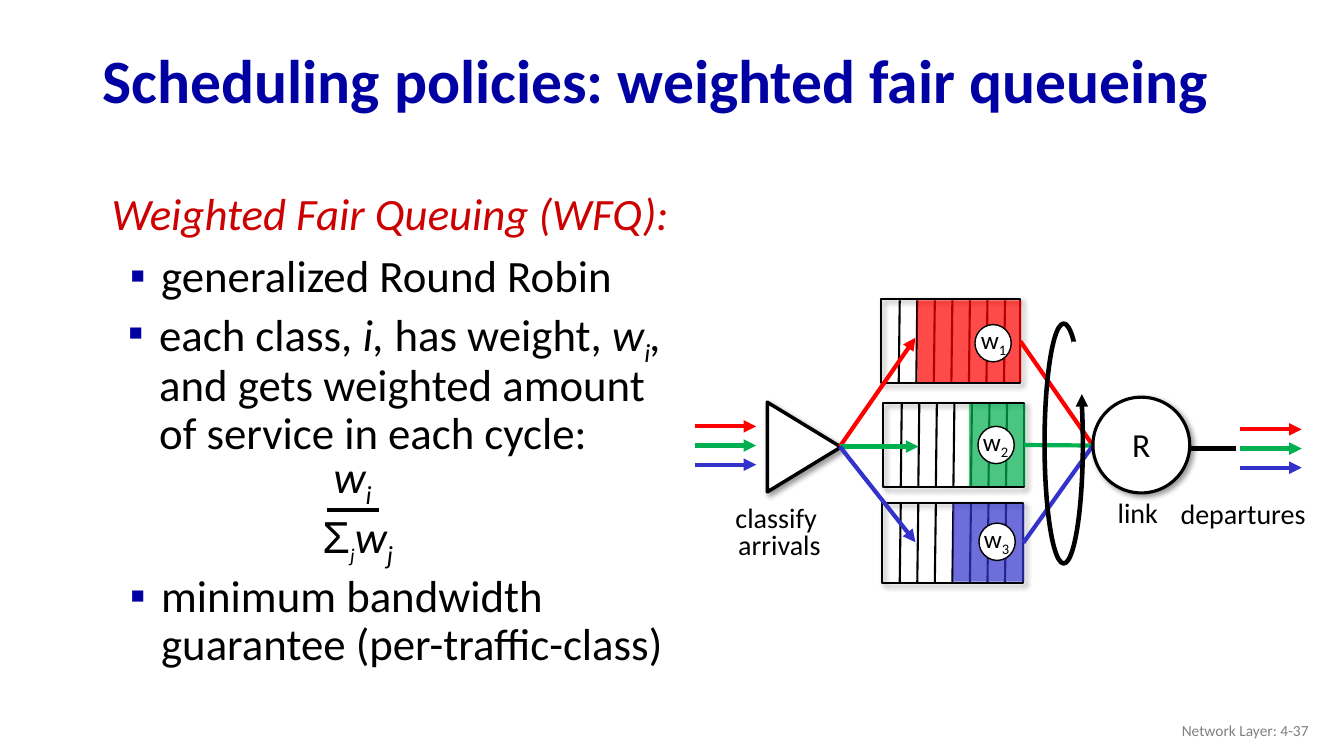
from lxml import etree
from pptx import Presentation
from pptx.dml.color import RGBColor
from pptx.enum.shapes import MSO_CONNECTOR, MSO_SHAPE
from pptx.enum.text import MSO_ANCHOR, MSO_AUTO_SIZE, PP_ALIGN
from pptx.oxml.ns import qn
from pptx.util import Inches, Pt

RECT, OVAL = MSO_SHAPE.RECTANGLE, MSO_SHAPE.OVAL
WEDGE = MSO_SHAPE.ISOSCELES_TRIANGLE
STRAIGHT = MSO_CONNECTOR.STRAIGHT
LEFT, MID, RIGHT = PP_ALIGN.LEFT, PP_ALIGN.CENTER, PP_ALIGN.RIGHT
CENTRE, FIT = MSO_ANCHOR.MIDDLE, MSO_AUTO_SIZE.SHAPE_TO_FIT_TEXT
BLACK, WHITE = RGBColor(0, 0, 0), RGBColor(255, 255, 255)
NAVY, CRIMSON = RGBColor(0x00, 0x00, 0xA3), RGBColor(0xCC, 0x00, 0x00)
GREY = RGBColor(0x80, 0x80, 0x80)
RED, GREEN = RGBColor(0xFF, 0x00, 0x00), RGBColor(0x00, 0xB0, 0x50)
BLUE = RGBColor(0x33, 0x33, 0xCC)
FLOWS = [RED, GREEN, BLUE]

deck = Presentation()
deck.slide_width, deck.slide_height = Inches(13.33), Inches(7.5)
slide = deck.slides.add_slide(deck.slide_layouts[5])


def draw(kind, box, fill=None, width=0, shade=False):
    """Add a shape; no fill colour leaves it hollow, zero width drops its outline."""
    shape = slide.shapes.add_shape(kind, *map(Inches, box))
    shape.shadow.inherit = False
    if fill is None:
        shape.fill.background()
    else:
        shape.fill.solid()
        shape.fill.fore_color.rgb = fill
    if width:
        shape.line.color.rgb = BLACK
        shape.line.width = Pt(width)
    else:
        shape.line.fill.background()
    if shade:
        effects = shape.element.spPr.find(qn("a:effectLst"))
        outer = etree.SubElement(effects, qn("a:outerShdw"), blurRad=str(Pt(4)),
                                 dist=str(Pt(3)), dir="2700000", rotWithShape="0")
        color = etree.SubElement(outer, qn("a:srgbClr"), val="000000")
        etree.SubElement(color, qn("a:alpha"), val="40000")
    return shape


def link(start, end, color=BLACK, width=3, arrow=False):
    """Add a straight line between two points, with an arrowhead at its end if asked."""
    line = slide.shapes.add_connector(STRAIGHT, *map(Inches, start + end))
    line.line.color.rgb = color
    line.line.width = Pt(width)
    if arrow:
        etree.SubElement(line.line._get_or_add_ln(), qn("a:tailEnd"), type="triangle")
    etree.SubElement(line.element.spPr, qn("a:effectLst"))
    return line


# Title
title = slide.shapes.title
title.left, title.top = Inches(0.92), Inches(0.34)
title.width, title.height = Inches(11.5), Inches(0.98)
title.text_frame.vertical_anchor = CENTRE
para = title.text_frame.paragraphs[0]
para.alignment, para.line_spacing = LEFT, 0.9
run = para.add_run()
run.text = "Scheduling policies: weighted fair queueing"
run.font.name, run.font.size, run.font.bold = "Calibri", Pt(44), True
run.font.color.rgb = NAVY

# Queues: left, top, width, height, width of the filled part
link((11.76, 4.45), (12.26, 4.45))
queues = []
for (x, y, w, h, part), color in zip([(8.74, 2.97, 1.38, 0.83, 1.03),
                                      (8.76, 4, 1.4, 0.83, 0.56),
                                      (8.75, 4.99, 1.4, 0.79, 0.71)], FLOWS):
    queues.append(draw(RECT, (x, y, w, h), None, 1.5, True))
    for n in range(1, 8):
        slot = x + 0.01 + n * 0.174
        link((slot, y + 0.01), (slot - 0.01, y + h), BLACK, 1.5)
    load = draw(RECT, (x + w + 0.01 - part, y + 0.01, part, h - 0.02), color)
    tint = load.element.spPr.find(qn("a:solidFill"))[0]
    etree.SubElement(tint, qn("a:alpha"), val="71000")

# Classifier and flows
draw(WEDGE, (7.53, 4.07, 0.89, 0.73), WHITE, 2.5, True).rotation = 90
for x, y in [(6.89, 4.23), (12.3, 4.26)]:
    for n, color in enumerate(FLOWS):
        link((x, y + n * 0.19), (x + 0.61, y + n * 0.19), color, arrow=True)
for tip, color in zip([(9.08, 3.35), (9.11, 4.43), (9.08, 5.38)], FLOWS):
    link((8.33, 4.43), tip, color, arrow=True)
for queue, color in zip(queues, FLOWS):
    link((10.15, 4.42), (10.84, 4.42), color).begin_connect(queue, 3)

# Link server and its cycle
draw(OVAL, (10.84, 3.94, 0.96, 0.95), WHITE, 2.25, True)
draw(OVAL, (10.36, 3.21, 0.38, 2.38), None, 3.25)
draw(RECT, (10.63, 3.39, 0.21, 0.64), WHITE)
link((10.73, 4.19), (10.73, 3.91), arrow=True)
for x, y in [(9.67, 3.22), (9.7, 4.23), (9.71, 5.19)]:
    draw(OVAL, (x, y, 0.36, 0.37), WHITE, 1)
link((3.24, 5.06), (3.76, 5.06))

# Texts: box, style, paragraphs of runs (text, size, marks: i italic, s subscript)
BODY, LABEL, MATH, FOOT = "body", "label", "math", "foot"
texts = [
    ((0.86, 1.85, 6.08, 1.22), BODY, [
        [("Weighted Fair Queuing (WFQ):", 32, "i")],
        [("generalized Round Robin", 32, "")]]),
    ((0.84, 3, 6.08, 1.55), BODY, [
        [("each class, ", 32, ""), ("i, ", 32, "i"), ("has weight, ", 32, ""),
         ("w", 32, "i"), ("i", 32, "is"), (", ", 32, "i"),
         ("and gets weighted amount of service in each cycle:", 32, "")]]),
    ((0.86, 5.64, 6.08, 1.15), BODY, [
        [("minimum bandwidth guarantee (per-traffic-class)", 32, "")]]),
    ((3.21, 4.4, 0.59, 0.64), MATH, [[("w", 32, "i"), ("i", 32, "is")]]),
    ((3.1, 5, 0.93, 0.64), MATH, [
        [("Σ", 32, ""), ("j", 24, "is"), ("w", 32, "i"), ("j", 32, "is")]]),
    ((7.19, 4.98, 1.08, 0.65), LABEL, [[("classify ", 20, "")], [("arrivals", 20, "")]]),
    ((11.6, 4.94, 1.46, 0.38), LABEL, [[("departures", 20, "")]]),
    ((10.98, 4.93, 0.61, 0.38), LABEL, [[("link", 20, "")]]),
    ((11.13, 4.23, 0.38, 0.43), LABEL, [[("R", 24, "")]]),
    ((10.08, 7.05, 3, 0.4), FOOT, [[("Network Layer: 4-37", 11, "")]]),
]
for n, (x, y) in enumerate([(9.63, 3.17), (9.65, 4.18), (9.66, 5.14)], 1):
    texts.append(((x, y, 0.47, 0.4), MATH, [[("w", 18, ""), (str(n), 18, "s")]]))

for box, style, paras in texts:
    frame = slide.shapes.add_textbox(*map(Inches, box)).text_frame
    frame.word_wrap = style in (BODY, FOOT)
    if style in (LABEL, MATH):
        frame.auto_size = FIT
    if style == FOOT:
        frame.vertical_anchor = CENTRE
    for n, runs in enumerate(paras):
        para = frame.add_paragraph() if n else frame.paragraphs[0]
        para.alignment = {LABEL: MID, FOOT: RIGHT}.get(style, LEFT)
        head = runs[0][0].startswith("Weighted")
        if style == LABEL:
            para.line_spacing = 0.8
        if style == BODY:
            para.line_spacing, para.space_before = 0.9, Pt(10)
            props = para._p.get_or_add_pPr()
            props.set("marL", str(Inches(0.39 if head else 0.64)))
            props.set("indent", str(Inches(-0.24 if head else -0.31)))
            if not head:
                dot = etree.SubElement(props, qn("a:buClr"))
                etree.SubElement(dot, qn("a:srgbClr"), val=str(NAVY))
                etree.SubElement(props, qn("a:buFont"), typeface="Arial")
                etree.SubElement(props, qn("a:buChar"), char="▪")
        for text, size, marks in runs:
            run = para.add_run()
            run.text = text
            run.font.name = "Arial" if text == "Σ" else "Calibri"
            run.font.size, run.font.italic = Pt(size), "i" in marks
            run.font.color.rgb = CRIMSON if head else GREY if style == FOOT else BLACK
            if "s" in marks:
                run._r.get_or_add_rPr().set("baseline", "-25000")

deck.save("out.pptx")
